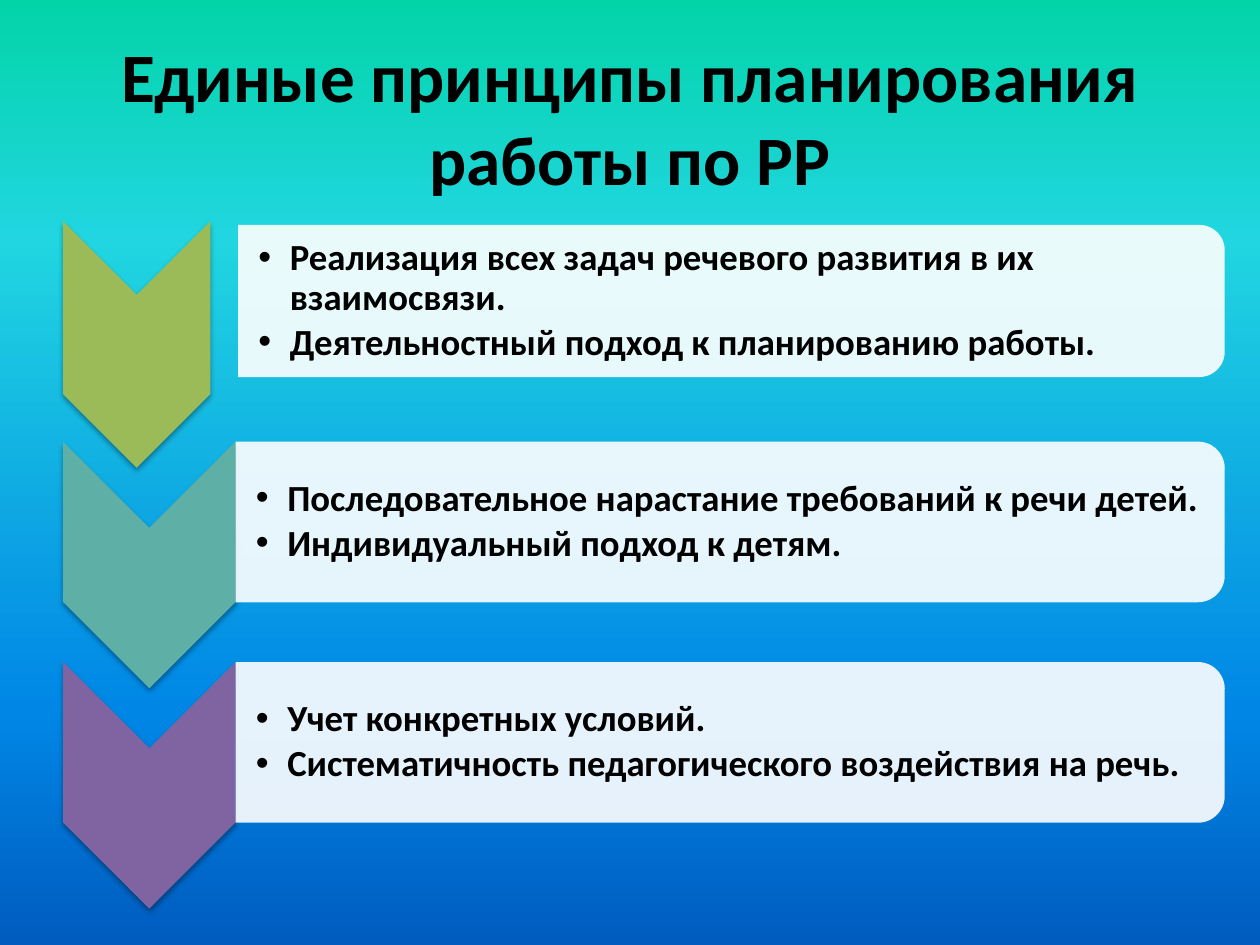
"""Build a slide with three chevron steps, each beside a card with a short list."""
import copy
import typing

import lxml.etree
import pptx
import pptx.dml.color
import pptx.enum.shapes
import pptx.enum.text
import pptx.oxml.ns
import pptx.util

RGB = pptx.dml.color.RGBColor
BLACK = RGB(0x00, 0x00, 0x00)
WHITE = RGB(0xFF, 0xFF, 0xFF)
GREEN = RGB(0x9B, 0xBB, 0x59)
TEAL = RGB(0x5E, 0xAF, 0xA6)
PURPLE = RGB(0x80, 0x64, 0xA2)
SKY = [
    (0, RGB(0x03, 0xD4, 0xA8)),
    (0.25, RGB(0x21, 0xD6, 0xE0)),
    (0.75, RGB(0x00, 0x87, 0xE6)),
    (1, RGB(0x00, 0x5C, 0xBF)),
]
FONT = "Calibri"
WIDE, HIGH = pptx.util.Inches(10), pptx.util.Inches(7.5)
LEFT, RIGHT = 0.05, 0.97
TOP, PITCH, TALL = 0.234, 0.2333, 0.261
SHAPES = pptx.enum.shapes.MSO_SHAPE
MIDDLE = pptx.enum.text.MSO_ANCHOR.MIDDLE


class Box(typing.NamedTuple):
    """Left, top, width and height as shares of the slide."""

    left: float
    top: float
    width: float
    height: float

    def place(self) -> tuple[int, int, int, int]:
        """Return the box in slide units."""
        return (round(self.left * WIDE), round(self.top * HIGH),
                round(self.width * WIDE), round(self.height * HIGH))


class Step(typing.NamedTuple):
    """One row: chevron colour and width, card edge, top and height, slot and list."""

    color: RGB
    width: float
    edge: float
    drop: float
    height: float
    slot: int
    items: list[str]


STEPS = [
    Step(GREEN, 0.117, 0.189, 0.004, 0.161, 1, [
        "Реализация всех задач речевого развития в их взаимосвязи.",
        "Деятельностный подход к планированию работы."]),
    Step(TEAL, 0.137, 0.187, 0, 0.17, 2, [
        "Последовательное нарастание требований к речи детей.",
        "Индивидуальный подход к детям."]),
    Step(PURPLE, 0.137, 0.187, 0, 0.17, 4, [
        "Учет конкретных условий.",
        "Систематичность педагогического воздействия на речь."]),
]


def node(parent, tag: str, **attrs: str):
    """Add an XML child with the given attributes."""
    return lxml.etree.SubElement(parent, pptx.oxml.ns.qn(tag), attrs)


def paint_sky(slide) -> None:
    """Fill the background with the four-stop gradient."""
    fill = slide.background.fill
    fill.gradient()
    fill.gradient_angle = 270
    stops = slide._element.find(".//" + pptx.oxml.ns.qn("a:gsLst"))
    for stop in list(stops):
        stops.append(copy.deepcopy(stop))
    for stop, (share, color) in zip(fill.gradient_stops, SKY):
        stop.position = share
        stop.color.rgb = color


def set_box(shape, box: Box) -> None:
    """Move a placeholder to its box."""
    shape.left, shape.top, shape.width, shape.height = box.place()


def add_run(para, text: str, size: float) -> None:
    """Add one bold black run."""
    run = para.add_run()
    run.text = text
    run.font.name, run.font.size = FONT, pptx.util.Pt(size)
    run.font.bold = True
    run.font.color.rgb = BLACK


def add_turned(slide, kind, box: Box, color: RGB):
    """Add a plain shape turned by a quarter so that it covers the box."""
    left, top, width, height = box.place()
    shift = (width - height) // 2
    shape = slide.shapes.add_shape(kind, left + shift, top - shift, height, width)
    shape.rotation = 90
    shape.shadow.inherit = False
    shape.fill.solid()
    shape.fill.fore_color.rgb = color
    shape.line.fill.background()
    return shape


def add_arrow(slide, box: Box, color: RGB) -> None:
    """Add a chevron that points down, with a soft shadow."""
    shape = add_turned(slide, SHAPES.CHEVRON, box, color)
    glow = shape._element.spPr.find(pptx.oxml.ns.qn("a:effectLst"))
    shade = node(glow, "a:outerShdw", blurRad="40000", dist="23000",
                 dir="5400000", rotWithShape="0")
    node(node(shade, "a:srgbClr", val="000000"), "a:alpha", val="35000")


def add_card(slide, box: Box) -> None:
    """Add a white card, slightly see-through, rounded on the right."""
    shape = add_turned(slide, SHAPES.ROUND_2_SAME_RECTANGLE, box, WHITE)
    tint = shape._element.spPr.find(".//" + pptx.oxml.ns.qn("a:srgbClr"))
    node(tint, "a:alpha", val="90000")


def fill_list(slide, shape, box: Box, items: list[str]) -> None:
    """Lay a bulleted list over its card."""
    slide.shapes._spTree.append(shape._element)
    set_box(shape, box)
    frame = shape.text_frame
    frame.word_wrap = True
    frame.auto_size = pptx.enum.text.MSO_AUTO_SIZE.NONE
    frame.vertical_anchor = MIDDLE
    frame.margin_left = pptx.util.Inches(0.16)
    frame.margin_top = frame.margin_right = frame.margin_bottom = pptx.util.Inches(0.01)
    for rank, text in enumerate(items):
        para = frame.add_paragraph() if rank else frame.paragraphs[0]
        para.level = 1
        para.line_spacing = 0.9
        para.space_before, para.space_after = pptx.util.Pt(0), pptx.util.Pt(3)
        props = para._p.get_or_add_pPr()
        dent = pptx.util.Inches(0.25)
        props.set("marL", str(dent))
        props.set("indent", str(-dent))
        node(props, "a:buFont", typeface="Arial")
        node(props, "a:buChar", char="•")
        add_run(para, text, 21)


def add_step(slide, slots: dict, row: int, step: Step) -> None:
    """Draw one row of the grid."""
    top = TOP + row * PITCH
    add_arrow(slide, Box(LEFT, top, step.width, TALL), step.color)
    card = Box(step.edge, top + step.drop, RIGHT + 0.002 - step.edge, step.height)
    add_card(slide, card)
    inset = 0.008
    area = Box(card.left, card.top + inset, card.width - inset, card.height - 2 * inset)
    fill_list(slide, slots[step.slot], area, step.items)


def main() -> None:
    """Build and save the slide."""
    deck = pptx.Presentation()
    deck.slide_width, deck.slide_height = WIDE, HIGH
    slide = deck.slides.add_slide(deck.slide_layouts.get_by_name("Comparison"))
    paint_sky(slide)
    title = slide.shapes.title
    set_box(title, Box(0.05, 0.04, 0.9, 0.167))
    title.text_frame.vertical_anchor = MIDDLE
    para = title.text_frame.paragraphs[0]
    para.alignment = pptx.enum.text.PP_ALIGN.CENTER
    add_run(para, "Единые принципы планирования работы по РР", 39.6)
    slots = {shape.placeholder_format.idx: shape for shape in slide.placeholders}
    for row, step in enumerate(STEPS):
        add_step(slide, slots, row, step)
    spare = slots[3]._element
    spare.getparent().remove(spare)
    deck.save("out.pptx")


if __name__ == "__main__":
    main()
